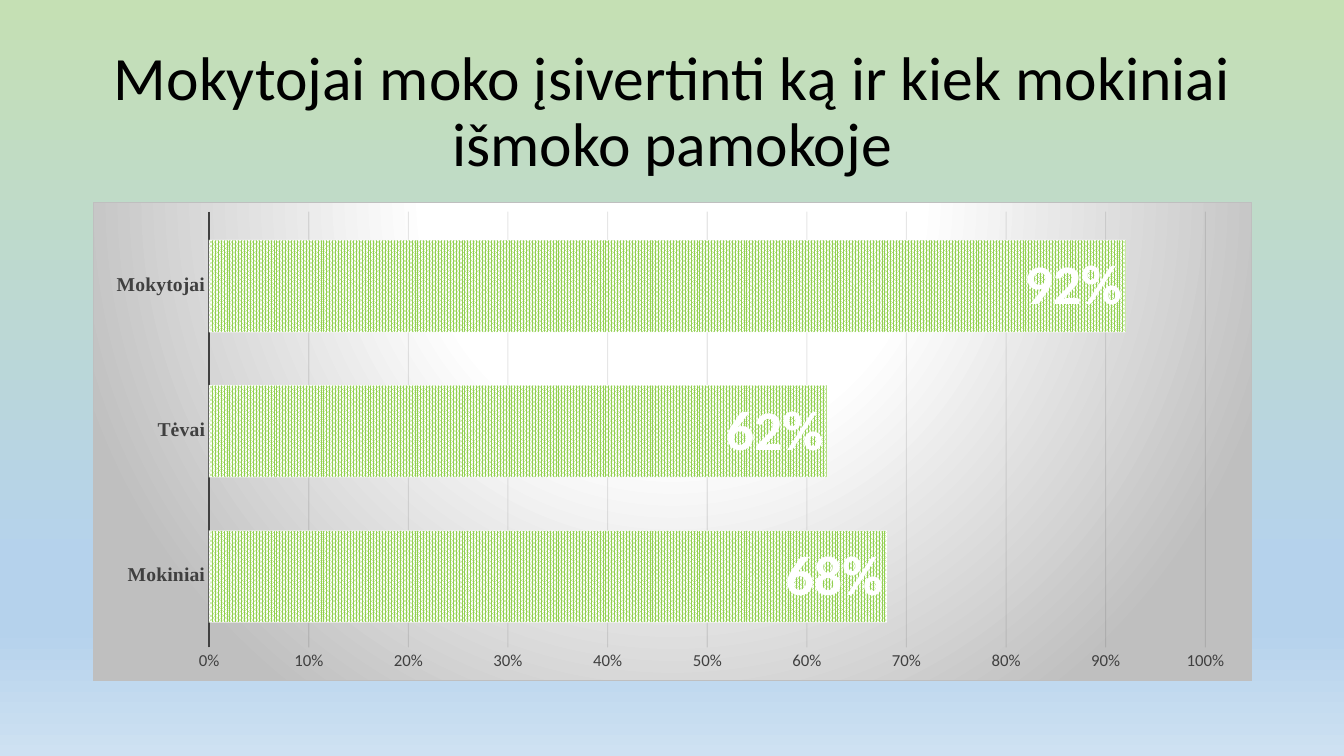
from dataclasses import dataclass

from lxml.etree import SubElement as Sub
from pptx import Presentation
from pptx.chart.data import CategoryChartData as Data
from pptx.dml.color import RGBColor as Rgb
from pptx.enum.chart import XL_CHART_TYPE as Kind
from pptx.enum.chart import XL_LABEL_POSITION as Spot
from pptx.enum.chart import XL_TICK_MARK as Tick
from pptx.enum.dml import MSO_PATTERN as Pattern
from pptx.enum.text import MSO_ANCHOR as Anchor
from pptx.enum.text import PP_ALIGN as Align
from pptx.oxml import parse_xml
from pptx.oxml.ns import nsdecls, qn
from pptx.util import Inches, Pt


@dataclass(frozen=True)
class Theme:
    sans: str = "Calibri"
    serif: str = "Times New Roman"
    black: str = "000000"
    white: str = "FFFFFF"
    text: str = "404040"
    grid: str = "0D0D0D"
    edge: str = "BFBFBF"
    green: str = "92D050"
    orange: str = "ED7D31"
    gray: str = "A5A5A5"
    title: int = 44
    value: int = 40
    names: int = 14
    scale: int = 12
    base: int = 10
    sky: tuple = ((0, "C5E0B4"), (74, "B5D2EC"), (83, "B5D2EC"), (100, "CEE1F2"))
    glow: tuple = ((0, "FFFFFF"), (39, "FFFFFF"), (100, "BFBFBF"))


T = Theme()
DOWN = '<a:lin ang="5400000" scaled="0"/>'
ROUND = ('<a:path path="circle">'
         '<a:fillToRect l="50000" t="-80000" r="50000" b="180000"/></a:path>')


# Formatting helpers
def apply(item, **values):
    for name, value in values.items():
        setattr(item, name, value)


def style(font, size, color, face=T.sans, bold=False):
    apply(font, size=Pt(size), name=face, bold=bold)
    font.color.rgb = Rgb.from_string(color)


def fade(fill, alpha):
    for color in fill.iter(qn("a:srgbClr")):
        Sub(color, qn("a:alpha")).set("val", str(alpha * 1000))


def stroke(line, color, width, alpha=100):
    line.width = Pt(width)
    line.color.rgb = Rgb.from_string(color)
    if alpha < 100:
        fade(line._ln, alpha)


def blend(stops, shape):
    marks = "".join(f'<a:gs pos="{at * 1000}"><a:srgbClr val="{color}"/></a:gs>'
                    for at, color in stops)
    return (f'<a:gradFill {nsdecls("a")} rotWithShape="1">'
            f'<a:gsLst>{marks}</a:gsLst>{shape}</a:gradFill>')


# Slide parts
def paint(slide):
    slide.background.fill.solid()
    back = slide._element.xpath(".//p:bgPr")[0]
    back.replace(back[0], parse_xml(blend(T.sky, DOWN)))


def add_title(slide, text):
    box = slide.shapes.add_textbox(Inches(0.92), Inches(0.4), Inches(11.5), Inches(1.45))
    apply(box.text_frame, word_wrap=True, vertical_anchor=Anchor.MIDDLE)
    para = box.text_frame.paragraphs[0]
    apply(para, text=text, alignment=Align.CENTER, line_spacing=0.9)
    style(para.runs[0].font, T.title, T.black)


def frame(chart):
    chart._chartSpace.chart.addnext(parse_xml(
        f'<c:spPr {nsdecls("c", "a")}>{blend(T.glow, ROUND)}'
        f'<a:ln w="{Pt(0.75)}"><a:solidFill><a:srgbClr val="{T.edge}"/>'
        '</a:solidFill></a:ln></c:spPr>'))
    sides = {"x": 0.1, "y": 0.02, "w": 0.86, "h": 0.91}
    rows = "".join(f'<c:{key} val="{val}"/>' for key, val in sides.items())
    area = chart._chartSpace.chart.plotArea
    for old in area.findall(qn("c:layout")):
        area.remove(old)
    area.insert(0, parse_xml(
        f'<c:layout {nsdecls("c")}><c:manualLayout><c:layoutTarget val="inner"/>'
        f'<c:xMode val="edge"/><c:yMode val="edge"/>{rows}</c:manualLayout></c:layout>'))


def set_axes(chart):
    names, scale = chart.category_axis, chart.value_axis
    for axis in (names, scale):
        apply(axis, major_tick_mark=Tick.NONE, minor_tick_mark=Tick.NONE)
    style(names.tick_labels.font, T.names, T.text, T.serif, True)
    stroke(names.format.line, T.text, 1.5)
    apply(scale, minimum_scale=0, maximum_scale=1, major_unit=0.1,
          has_major_gridlines=True)
    style(scale.tick_labels.font, T.scale, T.text)
    apply(scale.tick_labels, number_format="0%", number_format_is_linked=False)
    scale.format.line.fill.background()
    stroke(scale.major_gridlines.format.line, T.grid, 0.75, 10)


def set_bars(series, color, size, dotted):
    fill = series.format.fill
    if dotted:
        fill.patterned()
        fill.pattern = Pattern.PERCENT_80
        fill.back_color.rgb = Rgb.from_string(T.white)
    else:
        fill.solid()
    fill.fore_color.rgb = Rgb.from_string(color)
    if not dotted:
        fade(series._element.spPr, 85)
    stroke(series.format.line, T.white, 0.75, 50)
    labels = series.data_labels
    apply(labels, show_value=True, position=Spot.INSIDE_END,
          number_format="0%", number_format_is_linked=False)
    style(labels.font, size, T.white, bold=True)


def add_bars(slide, names, rows):
    data = Data(number_format="0%")
    data.categories = names
    for number, row in enumerate(rows, 1):
        data.add_series(f"Series {number}", row[0])
    chart = slide.shapes.add_chart(Kind.BAR_CLUSTERED, Inches(0.92), Inches(2),
                                   Inches(11.5), Inches(4.76), data).chart
    apply(chart, has_legend=False, has_title=False)
    style(chart.font, T.base, T.black)
    apply(chart.plots[0], gap_width=54, overlap=98, vary_by_categories=False)
    frame(chart)
    set_axes(chart)
    for series, (_, *look) in zip(chart.plots[0].series, rows):
        set_bars(series, *look)


def main():
    deck = Presentation()
    apply(deck, slide_width=Inches(13.33), slide_height=Inches(7.5))
    slide = deck.slides.add_slide(deck.slide_layouts[6])
    paint(slide)
    add_title(slide, "Mokytojai moko įsivertinti ką ir kiek mokiniai išmoko pamokoje")
    # Each row: values, colour, label size, dotted fill
    blank = (None,) * 3
    add_bars(slide, ("Mokiniai", "Tėvai", "Mokytojai"), (
        ((0.68, 0.62, 0.92), T.green, T.value, True),
        (blank, T.orange, T.scale, False),
        (blank, T.gray, T.scale, False),
    ))
    deck.save("out.pptx")


if __name__ == "__main__":
    main()
